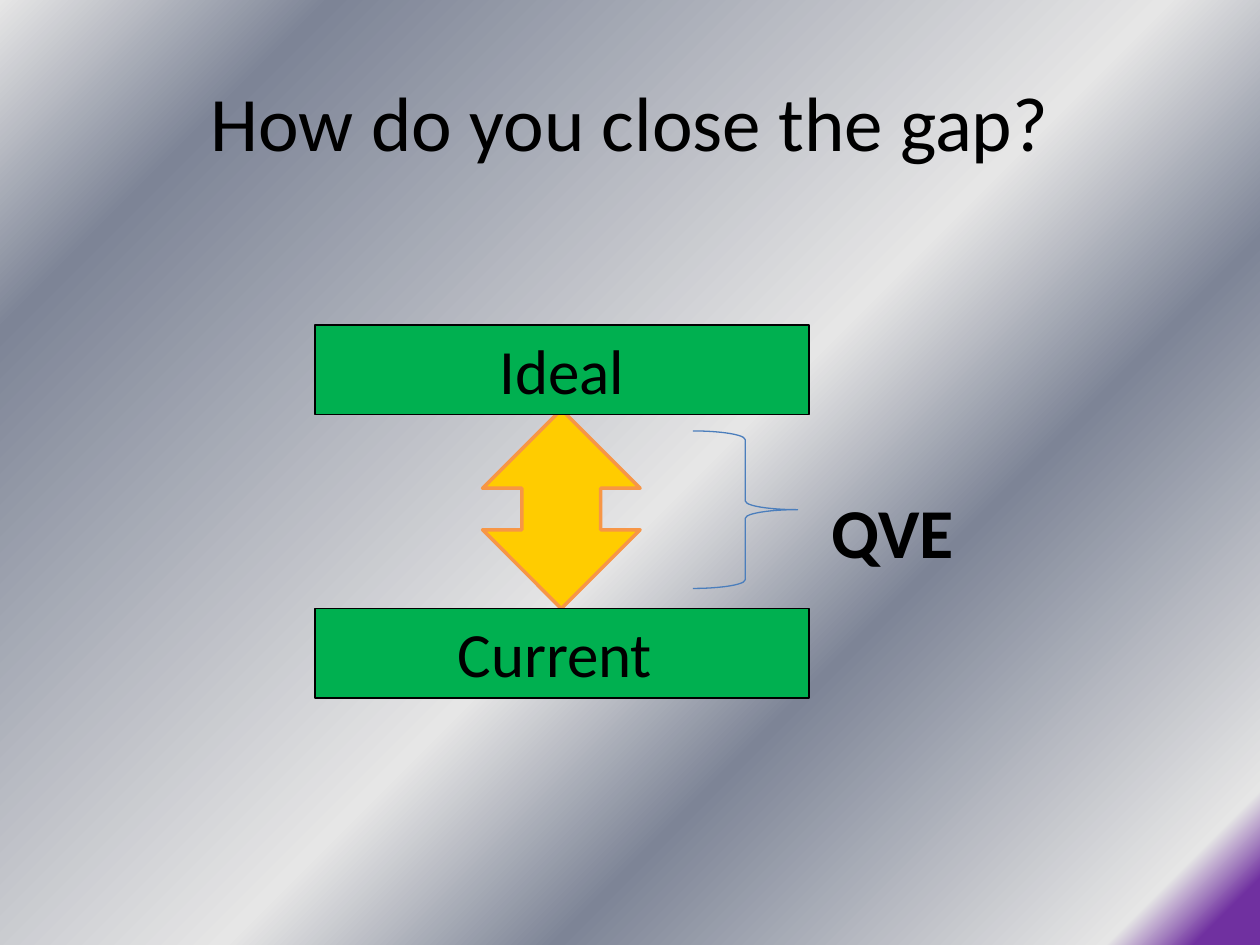
"""Build the slide that asks how to close the gap between ideal and current."""
from dataclasses import dataclass
from typing import Optional

from lxml import etree
from pptx import Presentation
from pptx.dml.color import RGBColor
from pptx.enum.shapes import MSO_SHAPE
from pptx.enum.text import MSO_ANCHOR, MSO_AUTO_SIZE, PP_ALIGN
from pptx.oxml.ns import qn
from pptx.util import Inches, Pt

RECTANGLE = MSO_SHAPE.RECTANGLE
DOUBLE_ARROW = MSO_SHAPE.UP_DOWN_ARROW
BRACE = MSO_SHAPE.RIGHT_BRACE
CENTER = PP_ALIGN.CENTER
LEFT = PP_ALIGN.LEFT
MIDDLE = MSO_ANCHOR.MIDDLE
TOP = MSO_ANCHOR.TOP
GROW = MSO_AUTO_SIZE.SHAPE_TO_FIT_TEXT
NO_AUTOFIT = MSO_AUTO_SIZE.NONE

FONT = "Calibri"
COLORS = {
    "text": "000000",
    "state": "00B050",
    "arrow": "FFCC00",
    "arrow_edge": "F79646",
    "brace": "4B7EBC",
    "purple": "7030A0",
    "silver": "E6E6E6",
    "steel": "7D8496",
}
BACKGROUND_STOPS = [
    (0, "purple"), (2, "purple"), (3, "purple"), (7, "silver"),
    (32, "steel"), (47, "silver"), (85, "steel"), (100, "silver"),
]


@dataclass(frozen=True)
class Figure:
    """A preset shape with its place, colours and optional label."""

    kind: MSO_SHAPE
    left: float
    top: float
    width: float
    height: float
    edge: str
    edge_width: float
    fill: Optional[str] = None
    label: str = ""


def state_box(label: str, top: float) -> Figure:
    """Describe a green bar that names one state."""
    return Figure(RECTANGLE, 2.5, top, 3.92, 0.71, "text", 0.75, "state", label)


FIGURES = [
    Figure(DOUBLE_ARROW, 3.83, 3.25, 1.25, 1.58, "arrow_edge", 2, "arrow"),
    state_box("Current ", 4.83),
    state_box("Ideal", 2.58),
    Figure(BRACE, 5.5, 3.42, 0.83, 1.25, "brace", 0.75),
]


def color(name: str) -> RGBColor:
    """Look up a named colour."""
    return RGBColor.from_string(COLORS[name])


def paint_background(page) -> None:
    """Fill the page with the diagonal metallic gradient."""
    fill = page.background.fill
    fill.gradient()
    fill.gradient_angle = 135
    stops = page.element.find(".//" + qn("a:gsLst"))
    for stop in list(stops):
        stops.remove(stop)
    for percent, name in BACKGROUND_STOPS:
        stop = etree.SubElement(stops, qn("a:gs"), pos=str(percent * 1000))
        etree.SubElement(stop, qn("a:srgbClr"), val=COLORS[name])


def write(box, text: str, size: float, align: PP_ALIGN = CENTER,
          anchor: MSO_ANCHOR = TOP, autofit: MSO_AUTO_SIZE = GROW,
          bold: bool = False) -> None:
    """Write one formatted run in a box."""
    frame = box.text_frame
    frame.word_wrap = True
    frame.auto_size = autofit
    frame.vertical_anchor = anchor
    para = frame.paragraphs[0]
    para.alignment = align
    span = para.add_run()
    span.text = text
    span.font.name = FONT
    span.font.size = Pt(size)
    span.font.bold = bold
    span.font.color.rgb = color("text")


def draw(page, figure: Figure) -> None:
    """Draw one figure on the page."""
    box = page.shapes.add_shape(
        figure.kind, Inches(figure.left), Inches(figure.top),
        Inches(figure.width), Inches(figure.height))
    box.shadow.inherit = False
    if figure.fill:
        box.fill.solid()
        box.fill.fore_color.rgb = color(figure.fill)
    else:
        box.fill.background()
    box.line.color.rgb = color(figure.edge)
    box.line.width = Pt(figure.edge_width)
    if figure.label:
        write(box, figure.label, 36)


def main() -> None:
    """Build and save the deck."""
    deck = Presentation()
    deck.slide_width, deck.slide_height = Inches(10), Inches(7.5)
    page = deck.slides.add_slide(deck.slide_layouts[5])
    paint_background(page)

    title = page.shapes.title
    title.left, title.top = Inches(0.5), Inches(0.33)
    title.width, title.height = Inches(9), Inches(1.25)
    write(title, "How do you close the gap?", 44, anchor=MIDDLE, autofit=NO_AUTOFIT)

    for figure in FIGURES:
        draw(page, figure)

    caption = page.shapes.add_textbox(
        Inches(6.5), Inches(3.83), Inches(1.67), Inches(0.77))
    write(caption, "QVE", 40, align=LEFT, bold=True)
    deck.save("out.pptx")


if __name__ == "__main__":
    main()
